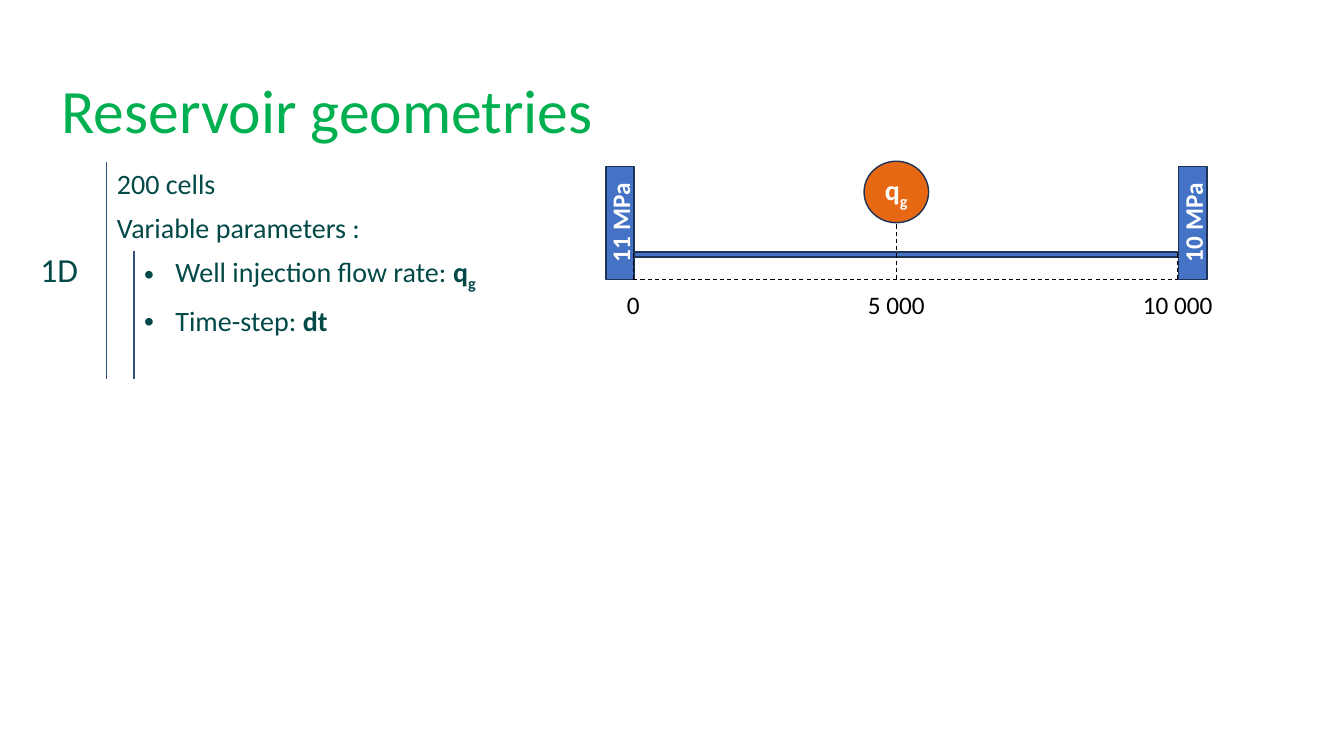
import pptx
import pptx.util
import pptx.dml.color
import pptx.enum.dml
import pptx.enum.shapes
import pptx.enum.text
import pptx.oxml
from lxml import etree

Inches = pptx.util.Inches
Shapes = pptx.enum.shapes.MSO_SHAPE
Align = pptx.enum.text.PP_ALIGN
Anchor = pptx.enum.text.MSO_ANCHOR
NAMESPACE = "http://schemas.openxmlformats.org/drawingml/2006/main"
NO_STYLE = "{2D5ABB26-0587-4C30-8999-92F81FD0307C}"

GREEN, TEAL, RULE = "00B050", "034947", "305178"
BLUE, NAVY, ORANGE = "4472C4", "1E3256", "E66813"
WHITE, BLACK = "FFFFFF", "000000"


def color(code):
    return pptx.dml.color.RGBColor.from_string(code)


def apply(target, values):
    for name, value in values.items():
        setattr(target, name, value)


def element(xml):
    """Parse a snippet whose a: prefix means DrawingML."""
    return pptx.oxml.parse_xml(xml.replace(" ", f' xmlns:a="{NAMESPACE}" ', 1))


class SlideBuilder:
    font = "Calibri"

    def __init__(self, deck):
        self.slide = deck.slides.add_slide(deck.slide_layouts[5])
        self.group = None

    def start_group(self):
        self.group = self.slide.shapes.add_group_shape()

    def add_spans(self, para, spans, size, code, bold=False):
        """Add spans given as (text, bold, subscript) or a plain string."""
        for item in spans:
            text, strong, subscript = (item, bold, False) if isinstance(item, str) else item
            span = para.add_run()
            span.text = text
            apply(span.font, {"name": self.font, "size": pptx.util.Pt(size), "bold": strong})
            span.font.color.rgb = color(code)
            if subscript:
                span.font._element.set("baseline", "-25000")

    def title(self, text, left, top, width, height):
        box = self.slide.shapes.title
        apply(box, {"left": Inches(left), "top": Inches(top),
                    "width": Inches(width), "height": Inches(height)})
        apply(box.text_frame, {"vertical_anchor": Anchor.MIDDLE, "word_wrap": True,
                               "auto_size": pptx.enum.text.MSO_AUTO_SIZE.NONE})
        para = box.text_frame.paragraphs[0]
        apply(para, {"alignment": Align.LEFT, "line_spacing": 0.9})
        self.add_spans(para, [text], 44, GREEN)

    def shape(self, kind, left, top, width, height, fill, line=None, spans=(),
              size=18, code=WHITE, bold=False, rotation=0):
        box = self.group.shapes.add_shape(kind, Inches(left), Inches(top),
                                          Inches(width), Inches(height))
        box.shadow.inherit = False
        box.rotation = rotation
        box.fill.solid()
        box.fill.fore_color.rgb = color(fill)
        if line:
            box.line.color.rgb = color(line)
            box.line.width = pptx.util.Pt(1)
        else:
            box.line.fill.background()
        apply(box.text_frame, {"vertical_anchor": Anchor.MIDDLE, "word_wrap": True})
        para = box.text_frame.paragraphs[0]
        para.alignment = Align.CENTER
        self.add_spans(para, spans, size, code, bold)

    def dashed_line(self, x1, y1, x2, y2):
        line = self.group.shapes.add_connector(
            pptx.enum.shapes.MSO_CONNECTOR.STRAIGHT,
            Inches(x1), Inches(y1), Inches(x2), Inches(y2))
        line.line.color.rgb = color(BLACK)
        apply(line.line, {"width": pptx.util.Pt(0.75),
                          "dash_style": pptx.enum.dml.MSO_LINE.DASH})
        etree.SubElement(line._element.spPr, f"{{{NAMESPACE}}}effectLst")

    def table(self, left, top, columns, rows):
        frame = self.slide.shapes.add_table(
            len(rows), len(columns), Inches(left), Inches(top),
            Inches(sum(columns)), Inches(sum(rows)))
        table = frame.table
        apply(table, {"first_row": False, "horz_banding": False})
        table._tbl.tblPr.find(f"{{{NAMESPACE}}}tableStyleId").text = NO_STYLE
        for column, width in zip(table.columns, columns):
            column.width = Inches(width)
        for row, height in zip(table.rows, rows):
            row.height = Inches(height)
        for cell in table.iter_cells():
            cell.fill.background()
        return table

    def cell(self, cell, spans, size=20, bullet=False):
        para = cell.text_frame.paragraphs[0]
        if bullet:
            properties = para._p.get_or_add_pPr()
            properties.set("marL", str(Inches(0.31)))
            properties.set("indent", str(-Inches(0.31)))
            properties.append(element('<a:buFont typeface="Arial"/>'))
            properties.append(element('<a:buChar char="•"/>'))
        self.add_spans(para, spans, size, TEAL)

    def cell_border(self, cell, side):
        border = element(f'<a:ln{side} w="12700"><a:solidFill><a:srgbClr val="{RULE}"/>'
                         f'</a:solidFill></a:ln{side}>')
        cell._tc.get_or_add_tcPr().insert(0, border)


def add_parameters(page):
    table = page.table(0.3, 1.61, [0.76, 0.27, 3.97], [0.44, 0.44, 0.47, 0.79, 0.43])
    for row in range(4):
        page.cell_border(table.cell(row, 0), "R")
        page.cell_border(table.cell(row, 1), "L")
    table.cell(0, 0).merge(table.cell(3, 0))
    table.cell(0, 0).vertical_anchor = Anchor.MIDDLE
    page.cell(table.cell(0, 0), ["1D"], size=24)
    for row, text in enumerate(["200 cells", "Variable parameters :"]):
        table.cell(row, 1).merge(table.cell(row, 2))
        page.cell(table.cell(row, 1), [text])
    page.cell(table.cell(2, 2), ["Well injection flow rate: ", ("q", True, False),
                                 ("g", True, True)], bullet=True)
    page.cell(table.cell(3, 2), ["Time-step: ", ("dt", True, False)], bullet=True)


def add_reservoir(page):
    start, end, well, base = 6.28, 11.68, 8.89, 2.77
    page.start_group()
    page.shape(Shapes.RECTANGLE, start, 2.5, end - start, 0.05, BLUE, NAVY)
    for left, pressure in [(5.59, "11 MPa"), (11.27, "10 MPa")]:
        page.shape(Shapes.RECTANGLE, left, 2.07, 1.12, 0.28, BLUE, NAVY,
                   [pressure], bold=True, rotation=270)
    page.dashed_line(start, base, end, base)
    for x, top in [(start, 2.48), (end, 2.5), (well, 1.95)]:
        page.dashed_line(x, base, x, top)
    for center, width, distance in [(start, 0.79, "0"), (well, 1.12, "5 000"),
                                    (end, 1.12, "10 000")]:
        page.shape(Shapes.RECTANGLE, center - width / 2, 2.88, width, 0.28, WHITE,
                   spans=[distance], code=BLACK)
    page.shape(Shapes.OVAL, well - 0.32, 1.6, 0.64, 0.61, ORANGE, NAVY,
               ["q", ("g", True, True)], size=20, bold=True)


def main():
    deck = pptx.Presentation()
    apply(deck, {"slide_width": Inches(13.33), "slide_height": Inches(7.5)})
    page = SlideBuilder(deck)
    page.title("Reservoir geometries", 0.51, 0.4, 11.91, 1.45)
    add_parameters(page)
    add_reservoir(page)
    deck.save("out.pptx")


if __name__ == "__main__":
    main()
